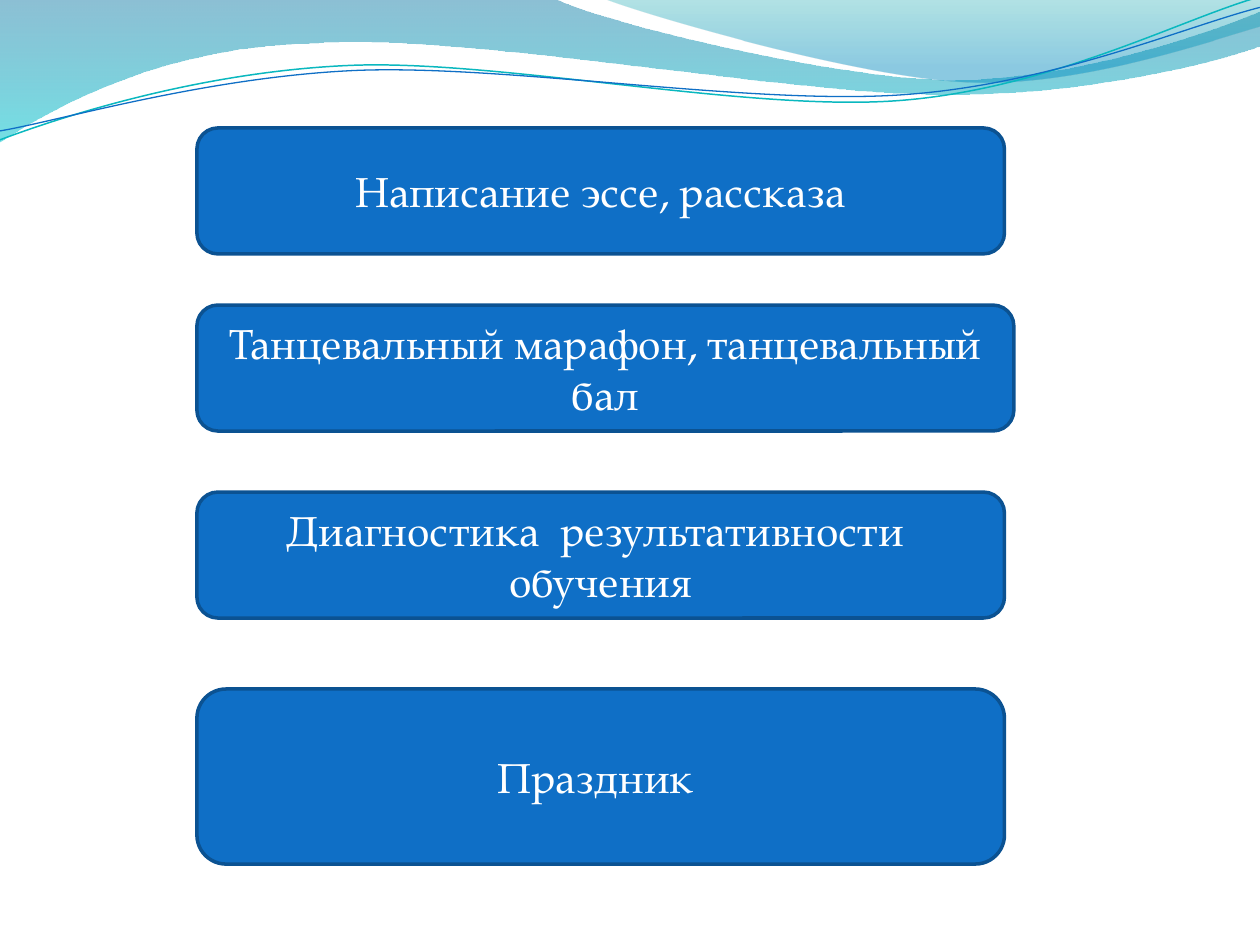
from dataclasses import dataclass
from typing import NamedTuple

from lxml.etree import SubElement
from pptx import Presentation
from pptx.dml.color import RGBColor
from pptx.enum.shapes import MSO_SHAPE
from pptx.enum.text import MSO_ANCHOR, PP_ALIGN
from pptx.oxml.ns import qn
from pptx.shapes.autoshape import Shape
from pptx.slide import Slide
from pptx.util import Cm, Pt

Point = tuple[float, float]
Segment = tuple[Point, ...]  # one point: straight line; three points: cubic curve


@dataclass(frozen=True)
class Theme:
    font: str = "TeX Gyre Pagella"
    text_size: Pt = Pt(24)
    text: str = "FFFFFF"
    box_fill: str = "0F6FC6"
    box_line: str = "0B5292"
    box_line_width: Pt = Pt(2)


class Stop(NamedTuple):
    position: float
    color: str
    opacity: int


class Wave(NamedTuple):
    start: Point
    segments: list[Segment]
    stops: tuple[Stop, Stop]


class Strand(NamedTuple):
    start: Point
    segments: list[Segment]
    color: str
    width: float


class Activity(NamedTuple):
    label: str
    top: float
    width: float = 16.28
    height: float = 2.54


THEME = Theme()
BOX_LEFT = 3.97

WAVES = [
    Wave((0, 0), [
        ((11.18, -0.03),),
        ((12.09, 0.43), (16.87, 1.6), (19.25, 1.6)),
        ((21.67, 1.6), (24.33, 0.66), (25.4, 0.23)),
        ((25.43, 0.91),),
        ((24.97, 1.12), (22.1, 1.93), (18.95, 1.9)),
        ((15.8, 1.9), (9.7, 0.71), (6.53, 0.86)),
        ((3.28, 0.91), (1.17, 2.11), (-0.03, 2.87)),
        ((0, 0),),
    ], (Stop(0, "0074A1", 45), Stop(1, "00C6CF", 55))),
    Wave((12.17, -0.03), [
        ((12.93, 0.28), (17.32, 1.57), (19.53, 1.65)),
        ((21.74, 1.75), (24.41, 0.81), (25.4, 0.53)),
        ((25.4, 0),),
        ((12.17, -0.03),),
    ], (Stop(0, "00A1A9", 30), Stop(0.8, "008BBF", 45))),
]

STRANDS = [
    Strand((0, 2.82), [
        ((1.22, 2.36), (4.01, 1.45), (7.04, 1.32)),
        ((10.03, 1.19), (15.06, 2.26), (18.11, 2.03)),
        ((21.16, 1.8), (23.83, 0.38), (25.35, -0.05)),
    ], "0AB8BF", 0.85),
    Strand((0, 2.64), [
        ((1.19, 2.44), (4.17, 1.55), (7.19, 1.42)),
        ((10.24, 1.3), (15.16, 2.13), (18.21, 1.91)),
        ((21.23, 1.7), (23.9, 0.53), (25.4, 0.15)),
    ], "0F6FC6", 0.75),
]

ACTIVITIES = [
    Activity("Написание эссе, рассказа", 2.58),
    Activity("Танцевальный марафон, танцевальный бал", 6.15, width=16.47),
    Activity("Диагностика  результативности  обучения", 9.92),
    Activity("Праздник ", 13.89, height=3.53),
]


def add_outline(page: Slide, start: Point, segments: list[Segment], close: bool) -> Shape:
    """Draw the segments' end points, then bend the cubic ones by their controls."""
    builder = page.shapes.build_freeform(Cm(start[0]), Cm(start[1]))
    builder.add_line_segments(
        [(Cm(x), Cm(y)) for x, y in (segment[-1] for segment in segments)], close=close)
    outline = builder.convert_to_shape()
    outline.shadow.inherit = False
    edges = list(outline._element.iter(qn("a:lnTo")))
    for edge, (*controls, _) in zip(edges, segments):
        if not controls:
            continue
        edge.tag = qn("a:cubicBezTo")
        for index, (x, y) in enumerate(controls):
            control = SubElement(edge, qn("a:pt"), x=str(Cm(x) - outline.left),
                                 y=str(Cm(y) - outline.top))
            edge.insert(index, control)
    return outline


def add_wave(page: Slide, wave: Wave) -> None:
    outline = add_outline(page, wave.start, wave.segments, close=True)
    outline.line.fill.background()
    outline.fill.gradient()
    outline.fill.gradient_angle = 270
    for target, stop in zip(outline.fill.gradient_stops, wave.stops):
        target.position = stop.position
        target.color.rgb = RGBColor.from_string(stop.color)
    colors = list(outline._element.spPr.iter(qn("a:srgbClr")))
    for color, stop in zip(colors, wave.stops):
        SubElement(color, qn("a:alpha"), val=str(stop.opacity * 1000))


def add_strand(page: Slide, strand: Strand) -> None:
    outline = add_outline(page, strand.start, strand.segments, close=False)
    outline.fill.background()
    outline.line.color.rgb = RGBColor.from_string(strand.color)
    outline.line.width = Pt(strand.width)


def add_activity(page: Slide, activity: Activity) -> None:
    box = page.shapes.add_shape(
        MSO_SHAPE.ROUNDED_RECTANGLE, Cm(BOX_LEFT), Cm(activity.top),
        Cm(activity.width), Cm(activity.height))
    box.shadow.inherit = False
    box.fill.solid()
    box.fill.fore_color.rgb = RGBColor.from_string(THEME.box_fill)
    box.line.color.rgb = RGBColor.from_string(THEME.box_line)
    box.line.width = THEME.box_line_width
    box.text_frame.word_wrap = True
    box.text_frame.vertical_anchor = MSO_ANCHOR.MIDDLE
    para = box.text_frame.paragraphs[0]
    para.alignment = PP_ALIGN.CENTER
    span = para.add_run()
    span.text = activity.label
    span.font.name = THEME.font
    span.font.size = THEME.text_size
    span.font.color.rgb = RGBColor.from_string(THEME.text)


def main() -> None:
    deck = Presentation()
    deck.slide_width, deck.slide_height = Cm(25.4), Cm(19.05)
    page = deck.slides.add_slide(deck.slide_layouts.get_by_name("Blank"))
    for wave in WAVES:
        add_wave(page, wave)
    for strand in STRANDS:
        add_strand(page, strand)
    for activity in ACTIVITIES:
        add_activity(page, activity)
    deck.save("out.pptx")


if __name__ == "__main__":
    main()
